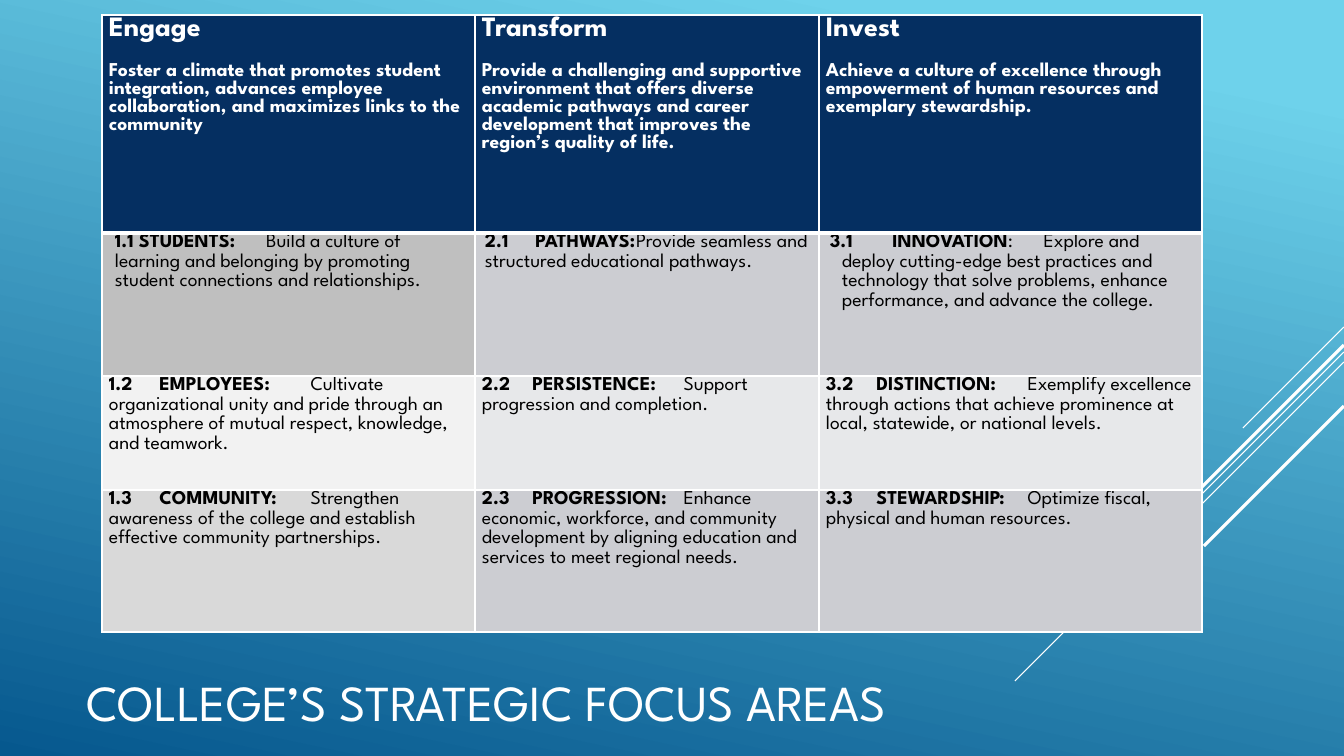
import dataclasses

import lxml.etree
import pptx
import pptx.dml.color
import pptx.enum.shapes
import pptx.enum.text
import pptx.oxml.ns
import pptx.util

RGB = pptx.dml.color.RGBColor
WHITE = RGB(0xFF, 0xFF, 0xFF)
BLACK = RGB(0, 0, 0)
NAVY = RGB(0x05, 0x2F, 0x61)
SKY = RGB(0x6E, 0xD2, 0xEB)
OCEAN = RGB(0x06, 0x58, 0x8E)
GREY = RGB(0xBF, 0xBF, 0xBF)
SILVER = RGB(0xD9, 0xD9, 0xD9)
PALE = RGB(0xF2, 0xF2, 0xF2)
COOL = RGB(0xCC, 0xCD, 0xD2)
COOL_PALE = RGB(0xE7, 0xE8, 0xEA)

FONT = "League Spartan"
LINE_SPACING = 1.07
COLUMN_WIDTHS = (373, 344, 383)
ROW_HEIGHTS = (218, 143, 114, 142)


@dataclasses.dataclass
class Streak:
    top: int
    run: int
    weight: float


@dataclasses.dataclass
class Area:
    name: str
    aim: str


@dataclasses.dataclass
class Goal:
    label: str
    text: str
    fill: RGB
    tabs: tuple[int, ...]
    margin: int = 0
    indent: int = 0


STREAKS = (
    Streak(327, 101, 0.75),
    Streak(352, 329, 0.75),
    Streak(362, 209, 0.75),
    Streak(345, 193, 2.25),
    Streak(406, 140, 2.25),
)

AREAS = (
    Area("Engage", "Foster a climate that promotes student integration, advances employee "
         "collaboration, and maximizes links to the community"),
    Area("Transform", "Provide a challenging and supportive environment that offers diverse "
         "academic pathways and career development that improves the region’s quality of life."),
    Area("Invest", "Achieve a culture of excellence through empowerment of human resources "
         "and exemplary stewardship."),
)

GOALS = (
    (
        Goal("1.1 STUDENTS:", "\tBuild a culture of learning and belonging by promoting "
             "student connections and relationships.", GREY, (148,), 6),
        Goal("2.1\tPATHWAYS:", "\tProvide seamless and structured educational pathways.",
             COOL, (42, 163), 3),
        Goal("3.1\tINNOVATION", ":\tExplore and deploy cutting-edge best practices and "
             "technology that solve problems, enhance performance, and advance the college.",
             COOL, (42, 182), 16, -12),
    ),
    (
        Goal("1.2\tEMPLOYEES:", "\tCultivate organizational unity and pride through an "
             "atmosphere of mutual respect, knowledge, and teamwork.", PALE, (39, 176)),
        Goal("2.2\tPERSISTENCE:", "\tSupport progression and completion.",
             COOL_PALE, (43, 183)),
        Goal("3.2\tDISTINCTION:", "\tExemplify excellence through actions that achieve "
             "prominence at local, statewide, or national levels.", COOL_PALE, (42, 199)),
    ),
    (
        Goal("1.3\tCOMMUNITY:", "\tStrengthen awareness of the college and establish "
             "effective community partnerships.", SILVER, (39, 177)),
        Goal("2.3\tPROGRESSION:", "\tEnhance economic, workforce, and community development "
             "by aligning education and services to meet regional needs.", COOL, (43, 198)),
        Goal("3.3\tSTEWARDSHIP:", "\tOptimize fiscal, physical and human resources.",
             COOL, (42, 186)),
    ),
)


def px(n: int) -> pptx.util.Emu:
    return pptx.util.Emu(round(n * 914400 / 100.8))


def sub(parent, tag: str, **attrs: str):
    return lxml.etree.SubElement(parent, pptx.oxml.ns.qn(tag), attrs)


def style(r, size: int, color: RGB, bold: bool = False) -> None:
    r.font.name = FONT
    r.font.size = pptx.util.Pt(size)
    r.font.bold = bold
    r.font.color.rgb = color


def set_background(slide) -> None:
    fill = slide.background.fill
    fill.gradient()
    fill.gradient_angle = 258
    for stop, position, color in zip(fill.gradient_stops, (0.1, 1.0), (SKY, OCEAN)):
        stop.position = position
        stop.color.rgb = color


def set_title(slide) -> None:
    sp = slide.shapes.title
    sp.left, sp.top, sp.width, sp.height = px(76), px(646), px(984), px(110)
    tf = sp.text_frame
    tf.text = "COLLEGE’S STRATEGIC FOCUS AREAS"
    tf.vertical_anchor = pptx.enum.text.MSO_ANCHOR.MIDDLE
    p = tf.paragraphs[0]
    p.alignment = pptx.enum.text.PP_ALIGN.LEFT
    style(p.runs[0], 36, WHITE)


def draw_streak(slide, streak: Streak) -> None:
    line = slide.shapes.add_connector(
        pptx.enum.shapes.MSO_CONNECTOR.STRAIGHT, px(1344), px(streak.top),
        px(1344 - streak.run), px(streak.top + streak.run))
    line.line.color.rgb = WHITE
    line.line.width = pptx.util.Pt(streak.weight)
    sub(line._element.spPr, "a:effectLst")


def format_cell(cell, fill: RGB, top: int, bottom: int) -> None:
    cell.margin_left = cell.margin_right = px(7)
    cell.margin_top = cell.margin_bottom = 0
    tc_pr = cell._tc.get_or_add_tcPr()
    for side, points in (("L", 1), ("R", 1), ("T", top), ("B", bottom)):
        ln = sub(tc_pr, f"a:ln{side}", w=str(pptx.util.Pt(points)))
        sub(sub(ln, "a:solidFill"), "a:srgbClr", val=str(WHITE))
    cell.fill.solid()
    cell.fill.fore_color.rgb = fill


def write_area(cell, area: Area) -> None:
    tf = cell.text_frame
    tf.text = f"{area.name}\n{area.aim}"
    heading, aim = tf.paragraphs
    heading.line_spacing = LINE_SPACING
    heading.space_after = pptx.util.Pt(14)
    style(heading.runs[0], 20, WHITE, True)
    style(aim.runs[0], 14, WHITE, True)


def write_goal(cell, goal: Goal) -> None:
    p = cell.text_frame.paragraphs[0]
    p.line_spacing = LINE_SPACING
    p_pr = p._p.get_or_add_pPr()
    p_pr.set("marL", str(px(goal.margin)))
    p_pr.set("indent", str(px(goal.indent)))
    tab_list = sub(p_pr, "a:tabLst")
    for tab in goal.tabs:
        sub(tab_list, "a:tab", pos=str(px(tab)), algn="l")
    for text, bold in ((goal.label, True), (goal.text, False)):
        r = p.add_run()
        r.text = text
        style(r, 14, BLACK, bold)


def draw_table(slide) -> None:
    table = slide.shapes.add_table(
        len(ROW_HEIGHTS), len(COLUMN_WIDTHS), px(102), px(15),
        px(sum(COLUMN_WIDTHS)), px(sum(ROW_HEIGHTS))).table
    table.horz_banding = False
    for column, width in zip(table.columns, COLUMN_WIDTHS):
        column.width = px(width)
    for row, height in zip(table.rows, ROW_HEIGHTS):
        row.height = px(height)
    for j, area in enumerate(AREAS):
        format_cell(table.cell(0, j), NAVY, 1, 3)
        write_area(table.cell(0, j), area)
    for i, goals in enumerate(GOALS, 1):
        for j, goal in enumerate(goals):
            format_cell(table.cell(i, j), goal.fill, 3 if i == 1 else 1, 1)
            write_goal(table.cell(i, j), goal)


def main() -> None:
    prs = pptx.Presentation()
    prs.slide_width, prs.slide_height = px(1344), px(756)
    slide = prs.slides.add_slide(prs.slide_layouts.get_by_name("Title Only"))
    set_background(slide)
    set_title(slide)
    for streak in STREAKS:
        draw_streak(slide, streak)
    draw_table(slide)
    prs.save("out.pptx")


if __name__ == "__main__":
    main()
